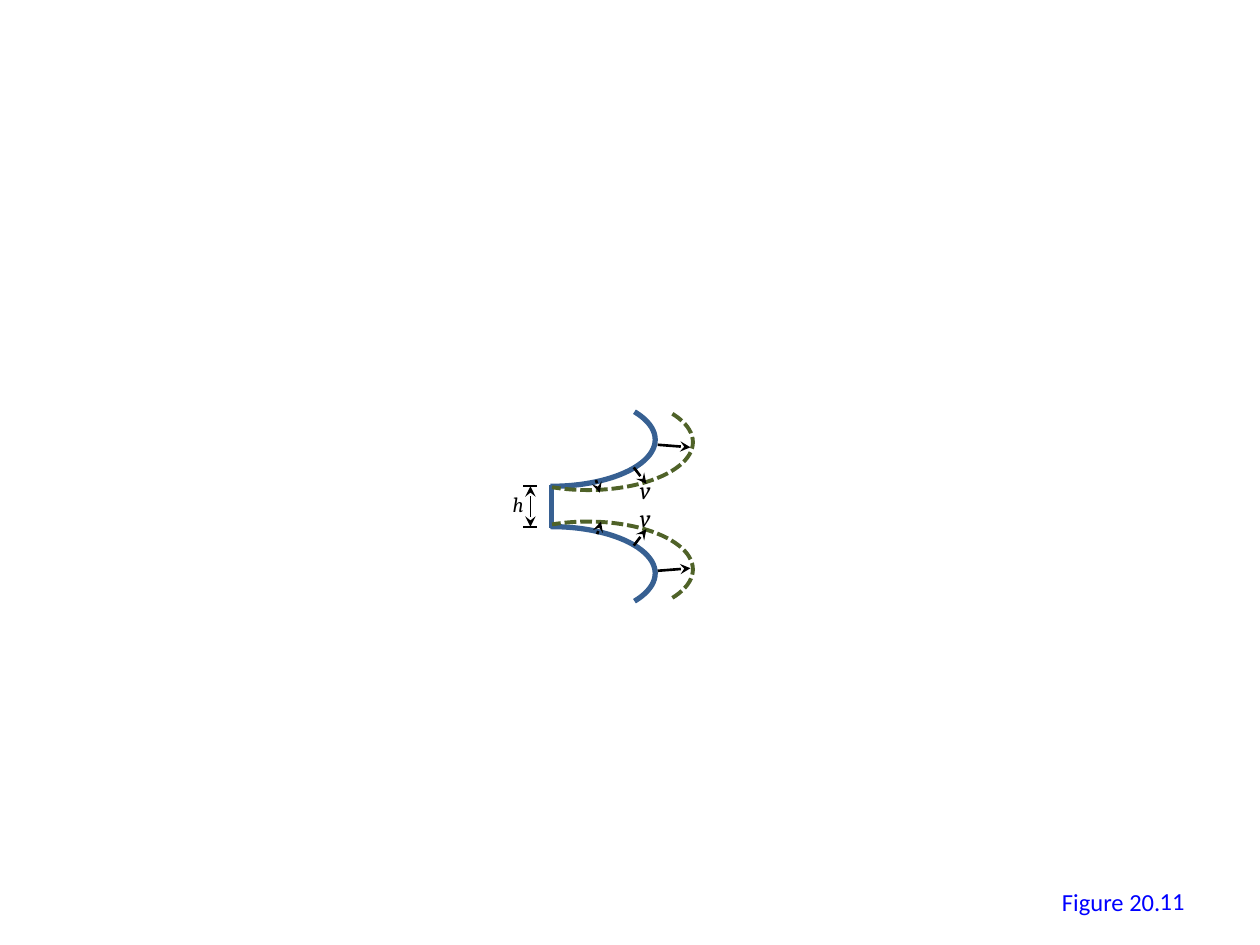
from pptx import Presentation
from pptx.dml.color import RGBColor
from pptx.enum.dml import MSO_LINE
from pptx.enum.shapes import MSO_CONNECTOR, MSO_SHAPE
from pptx.enum.text import MSO_ANCHOR, MSO_AUTO_SIZE, PP_ALIGN
from pptx.oxml.ns import qn
from pptx.util import Inches, Pt
from lxml.etree import SubElement

BLACK = RGBColor(0x00, 0x00, 0x00)
SURFACE_BLUE = RGBColor(0x37, 0x60, 0x92)
MOVED_GREEN = RGBColor(0x4F, 0x62, 0x28)
CAPTION_BLUE = RGBColor(0x00, 0x00, 0xFF)


class Figure:
    """Holds the style and the slide being drawn."""
    symbol_font = "Cambria"
    caption_font = "Calibri"

    def __init__(self, slide):
        self.slide = slide

    def line(self, start, end, width=1.5, color=BLACK, arrows=()):
        """Draw a straight line; arrows names the ends (headEnd, tailEnd) with a stealth tip."""
        points = [Inches(value) for value in (*start, *end)]
        connector = self.slide.shapes.add_connector(MSO_CONNECTOR.STRAIGHT, *points)
        connector.line.width = Pt(width)
        connector.line.color.rgb = color
        for tip in arrows:
            SubElement(connector.line._get_or_add_ln(), qn(f"a:{tip}"), type="stealth")
        SubElement(connector._element.spPr, qn("a:effectLst"))

    def arc(self, box, sweep, width, color, dash=None, flipped=False):
        """Draw an arc whose sweep is (start, end) in adjustment units."""
        arc = self.slide.shapes.add_shape(MSO_SHAPE.ARC, *map(Inches, box))
        arc.shadow.inherit = False
        arc.adjustments[0], arc.adjustments[1] = sweep
        arc.fill.background()
        arc.line.color.rgb = color
        arc.line.width = Pt(width)
        if dash:
            arc.line.dash_style = dash
        if flipped:
            arc._element.spPr.find(qn("a:xfrm")).set("flipV", "1")

    def text(self, words, box, *, font=symbol_font, size=14, color=BLACK, italic=False,
             align=PP_ALIGN.LEFT, anchor=MSO_ANCHOR.TOP, wrap=False):
        frame = self.slide.shapes.add_textbox(*map(Inches, box)).text_frame
        frame.word_wrap = wrap
        frame.auto_size = MSO_AUTO_SIZE.NONE if wrap else MSO_AUTO_SIZE.SHAPE_TO_FIT_TEXT
        frame.vertical_anchor = anchor
        paragraph = frame.paragraphs[0]
        paragraph.alignment = align
        run = paragraph.add_run()
        run.text = words
        run.font.name = font
        run.font.size = Pt(size)
        run.font.italic = italic
        run.font.color.rgb = color


def draw_caption(figure):
    figure.text("Figure 20.", (8.33, 6.99, 0.99, 0.34), font=figure.caption_font,
                color=CAPTION_BLUE)


def draw_surfaces(figure):
    figure.line((4.38, 3.85), (4.38, 4.19), 3, SURFACE_BLUE)
    for top, flipped in ((3.12, False), (4.18, True)):
        figure.arc((3.55, top, 1.65, 0.74), (204.865, 54.682), 3, SURFACE_BLUE,
                   flipped=flipped)


def draw_height(figure):
    upper, lower = 3.86, 4.18
    figure.line((4.21, lower), (4.21, upper), 1, arrows=("headEnd", "tailEnd"))
    for level in (lower, upper):
        figure.line((4.26, level), (4.15, level), 1)
    figure.text("h", (3.97, 3.85, 0.33, 0.3), size=12, italic=True)


def draw_velocity_labels(figure):
    for top in (3.94, 3.72):
        figure.text("v", (4.98, top, 0.35, 0.34), italic=True)


def draw_moved_surfaces(figure):
    for top, flipped in ((3.13, False), (4.14, True)):
        figure.arc((3.83, top, 1.67, 0.76), (204.865, 77.013), 2.25, MOVED_GREEN,
                   dash=MSO_LINE.SQUARE_DOT, flipped=flipped)


def draw_velocities(figure):
    upper_moves = [((4.73, 3.81), (4.76, 3.91)),
                   ((5.03, 3.71), (5.13, 3.84)),
                   ((5.22, 3.53), (5.48, 3.55))]
    lower_moves = [((4.74, 4.24), (4.77, 4.14)),
                   ((5.03, 4.33), (5.13, 4.2)),
                   ((5.22, 4.53), (5.48, 4.51))]
    for start, end in upper_moves + lower_moves:
        figure.line(start, end, arrows=("tailEnd",))


def draw_number(figure):
    figure.text("11", (7.17, 6.95, 2.33, 0.4), font=figure.caption_font, color=CAPTION_BLUE,
                align=PP_ALIGN.RIGHT, anchor=MSO_ANCHOR.MIDDLE, wrap=True)


def main():
    deck = Presentation()
    deck.slide_width, deck.slide_height = Inches(10), Inches(7.5)
    figure = Figure(deck.slides.add_slide(deck.slide_layouts[6]))
    for draw in (draw_caption, draw_surfaces, draw_height, draw_velocity_labels,
                 draw_moved_surfaces, draw_velocities, draw_number):
        draw(figure)
    deck.save("out.pptx")


if __name__ == "__main__":
    main()
